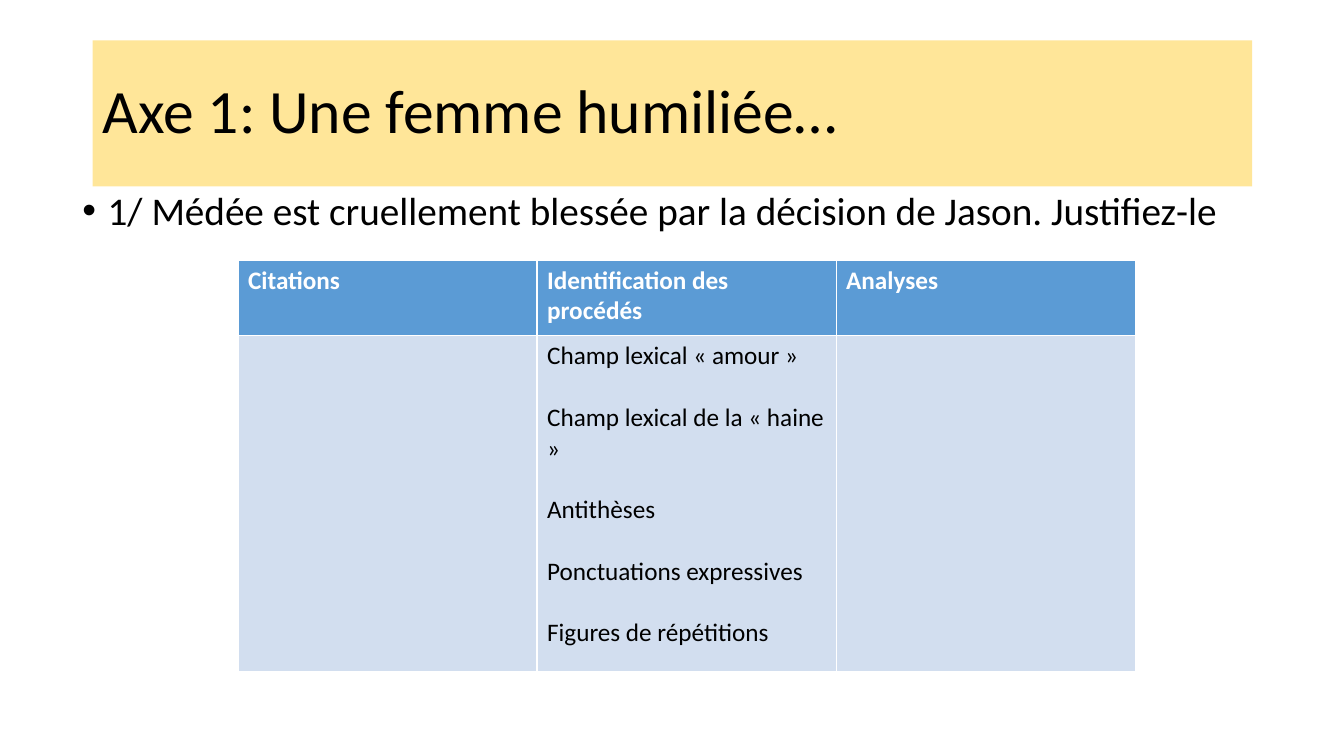
from lxml.etree import SubElement
from pptx import Presentation
from pptx.dml.color import RGBColor
from pptx.enum.shapes import MSO_SHAPE as Shape
from pptx.enum.text import MSO_ANCHOR as Anchor, PP_ALIGN as Align
from pptx.oxml.ns import qn
from pptx.util import Inches, Pt

FONT = "Calibri"
BLACK = RGBColor(0x00, 0x00, 0x00)
WHITE = RGBColor(0xFF, 0xFF, 0xFF)
YELLOW = RGBColor(0xFF, 0xE6, 0x99)
BLUE = RGBColor(0x5B, 0x9B, 0xD5)
PALE_BLUE = RGBColor(0xD2, 0xDE, 0xEF)

HEADINGS = ["Citations", "Identification des procédés", "Analyses"]
DEVICES = [
    "Champ lexical « amour »",
    "Champ lexical de la « haine »",
    "Antithèses",
    "Ponctuations expressives",
    "Figures de répétitions",
]


def format_para(para, size, color, bold=False):
    para.alignment = Align.LEFT
    for span in para.runs:
        span.font.name = FONT
        span.font.size = Pt(size)
        span.font.bold = bold
        span.font.color.rgb = color


def add_title(page, text):
    box = page.shapes.add_shape(
        Shape.RECTANGLE, Inches(0.92), Inches(0.4), Inches(11.5), Inches(1.45))
    box.shadow.inherit = False
    box.fill.solid()
    box.fill.fore_color.rgb = YELLOW
    box.line.fill.background()
    frame = box.text_frame
    frame.text = text
    frame.vertical_anchor = Anchor.MIDDLE
    frame.paragraphs[0].line_spacing = 0.9
    format_para(frame.paragraphs[0], 44, BLACK)


def add_bullet(para):
    properties = para._p.get_or_add_pPr()
    properties.set("marL", str(Inches(0.25)))
    properties.set("indent", str(-Inches(0.25)))
    SubElement(properties, qn("a:buFont"), typeface="Arial")
    SubElement(properties, qn("a:buChar"), char="•")


def add_question(page, text):
    box = page.shapes.add_textbox(
        Inches(0.72), Inches(1.85), Inches(11.56), Inches(4.76))
    frame = box.text_frame
    frame.word_wrap = True
    frame.text = text
    para = frame.paragraphs[0]
    para.line_spacing = 0.9
    para.space_before = Pt(10)
    format_para(para, 28, BLACK)
    add_bullet(para)


def fill_cell(cell, lines, fill, color, bold=False):
    cell.fill.solid()
    cell.fill.fore_color.rgb = fill
    cell.text_frame.text = "\n".join(lines)
    for index, para in enumerate(cell.text_frame.paragraphs):
        format_para(para, 18, color, bold)
        if index:
            para.space_before = Pt(22)


def add_analysis_table(page):
    # The default table style supplies the white cell borders
    table = page.shapes.add_table(
        2, len(HEADINGS), Inches(2.36), Inches(2.58),
        Inches(8.9), Inches(4.08)).table
    for row, height in zip(table.rows, (0.75, 3.33)):
        row.height = Inches(height)
    for column, heading in enumerate(HEADINGS):
        fill_cell(table.cell(0, column), [heading], BLUE, WHITE, bold=True)
        lines = DEVICES if column == 1 else []
        fill_cell(table.cell(1, column), lines, PALE_BLUE, BLACK)


def main():
    deck = Presentation()
    deck.slide_width = Inches(13.33)
    deck.slide_height = Inches(7.5)
    page = deck.slides.add_slide(deck.slide_layouts[6])

    # Heading and question
    add_title(page, "Axe 1: Une femme humiliée…")
    add_question(
        page,
        "1/ Médée est cruellement blessée par la décision de Jason. Justifiez-le")

    # Table to complete
    add_analysis_table(page)

    deck.save("out.pptx")


if __name__ == "__main__":
    main()
